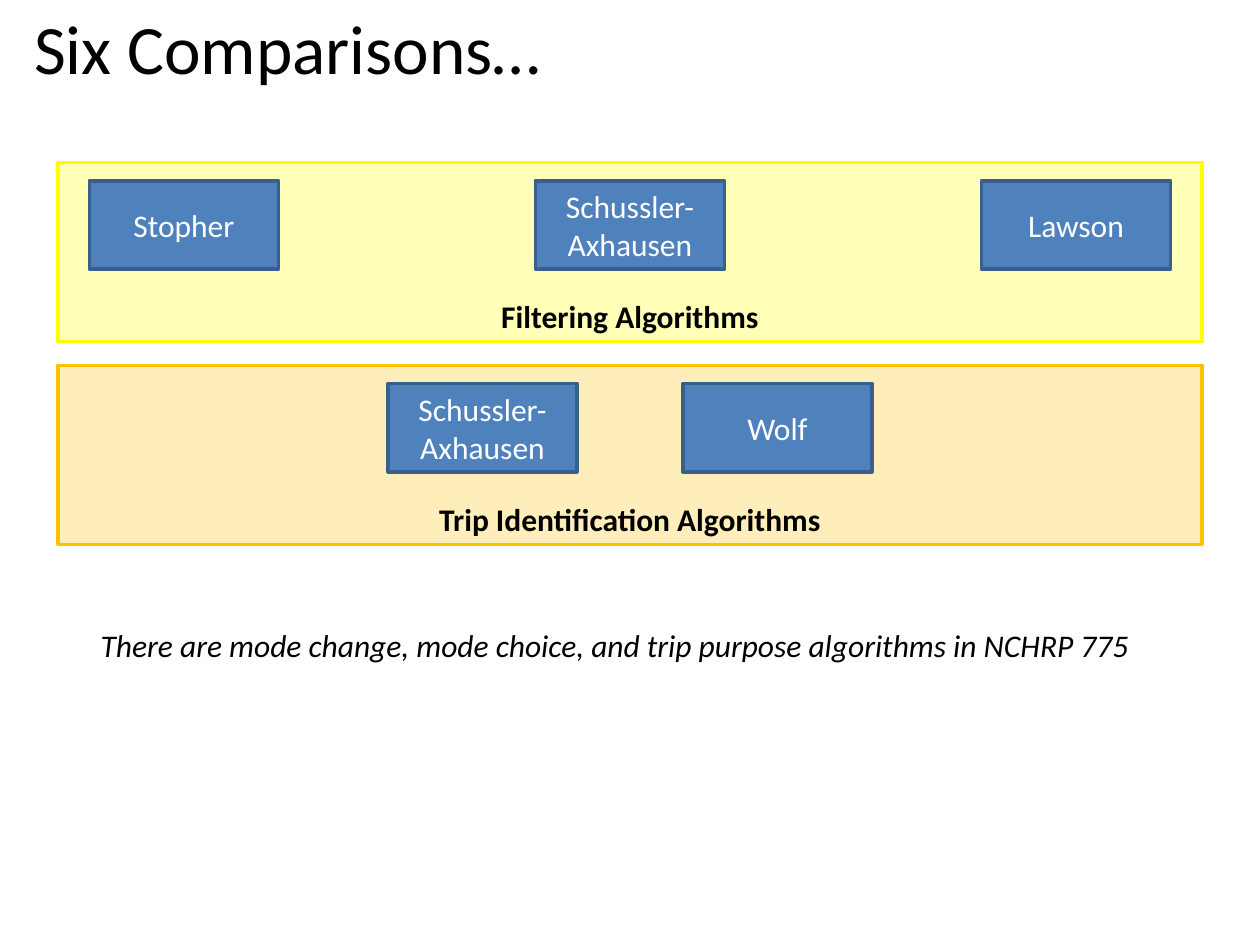
from dataclasses import dataclass

from pptx import Presentation
from pptx.dml.color import RGBColor
from pptx.enum.shapes import MSO_SHAPE as Shape
from pptx.enum.text import MSO_ANCHOR as Anchor, MSO_AUTO_SIZE as AutoSize, PP_ALIGN as Align
from pptx.util import Inches, Pt

SLIDE_WIDTH = 10
PANEL_WIDTH, PANEL_HEIGHT = 9.08, 1.42
CARD_WIDTH, CARD_HEIGHT = 1.5, 0.7
CARD_INSET = 0.145  # from panel top to card top


@dataclass
class Panel:
    label: str
    top: float
    fill: str
    line: str
    cards: list[str]
    pitch: float  # distance between the left edges of neighbouring cards


PANELS = [
    Panel("Filtering Algorithms", 1.29, "FFFFB7", "FFFF00",
          ["Stopher", "Schussler-Axhausen", "Lawson"], 3.54),
    Panel("Trip Identification Algorithms", 2.9, "FFEEB9", "FFC000",
          ["Schussler-Axhausen", "Wolf"], 2.34),
]


def color(value: str) -> RGBColor:
    return RGBColor.from_string(value)


def write(frame, text: str, size: float, ink: str, align=Align.LEFT,
          bold: bool = False, italic: bool = False) -> None:
    frame.text = text
    para = frame.paragraphs[0]
    para.alignment = align
    font = para.font
    font.name, font.size = "Calibri", Pt(size)
    font.bold, font.italic = bold, italic
    font.color.rgb = color(ink)


def add_box(page, left: float, top: float, width: float, height: float,
            fill: str, line: str, text: str, ink: str, anchor, bold: bool = False) -> None:
    box = page.shapes.add_shape(Shape.RECTANGLE, Inches(left), Inches(top),
                                Inches(width), Inches(height))
    box.shadow.inherit = False
    box.fill.solid()
    box.fill.fore_color.rgb = color(fill)
    box.line.color.rgb = color(line)
    box.line.width = Pt(2)
    box.text_frame.word_wrap = True
    box.text_frame.vertical_anchor = anchor
    write(box.text_frame, text, 18, ink, Align.CENTER, bold=bold)


def add_panel(page, panel: Panel) -> None:
    add_box(page, (SLIDE_WIDTH - PANEL_WIDTH) / 2, panel.top, PANEL_WIDTH, PANEL_HEIGHT,
            panel.fill, panel.line, panel.label, "000000", Anchor.BOTTOM, bold=True)
    # Cards are centred on the slide as a row
    row_width = (len(panel.cards) - 1) * panel.pitch + CARD_WIDTH
    first_left = (SLIDE_WIDTH - row_width) / 2
    for index, name in enumerate(panel.cards):
        add_box(page, first_left + index * panel.pitch, panel.top + CARD_INSET,
                CARD_WIDTH, CARD_HEIGHT, "4F81BD", "3A5F8C", name, "FFFFFF", Anchor.MIDDLE)


def main() -> None:
    deck = Presentation()
    deck.slide_width, deck.slide_height = Inches(SLIDE_WIDTH), Inches(7.5)
    page = deck.slides.add_slide(deck.slide_layouts[5])

    # Title
    title = page.shapes.title
    title.left, title.top = Inches(0.17), Inches(0)
    title.width, title.height = Inches(8.83), Inches(0.75)
    title.text_frame.vertical_anchor = Anchor.MIDDLE
    title.text_frame.auto_size = AutoSize.NONE
    write(title.text_frame, "Six Comparisons…", 39.6, "000000")

    # Algorithm panels
    for panel in PANELS:
        add_panel(page, panel)

    # Closing remark
    remark = page.shapes.add_textbox(Inches(0.7), Inches(4.92), Inches(8.52), Inches(0.4))
    remark.text_frame.word_wrap = False
    remark.text_frame.auto_size = AutoSize.SHAPE_TO_FIT_TEXT
    write(remark.text_frame,
          "There are mode change, mode choice, and trip purpose algorithms in NCHRP 775",
          18, "000000", italic=True)

    deck.save("out.pptx")


if __name__ == "__main__":
    main()
